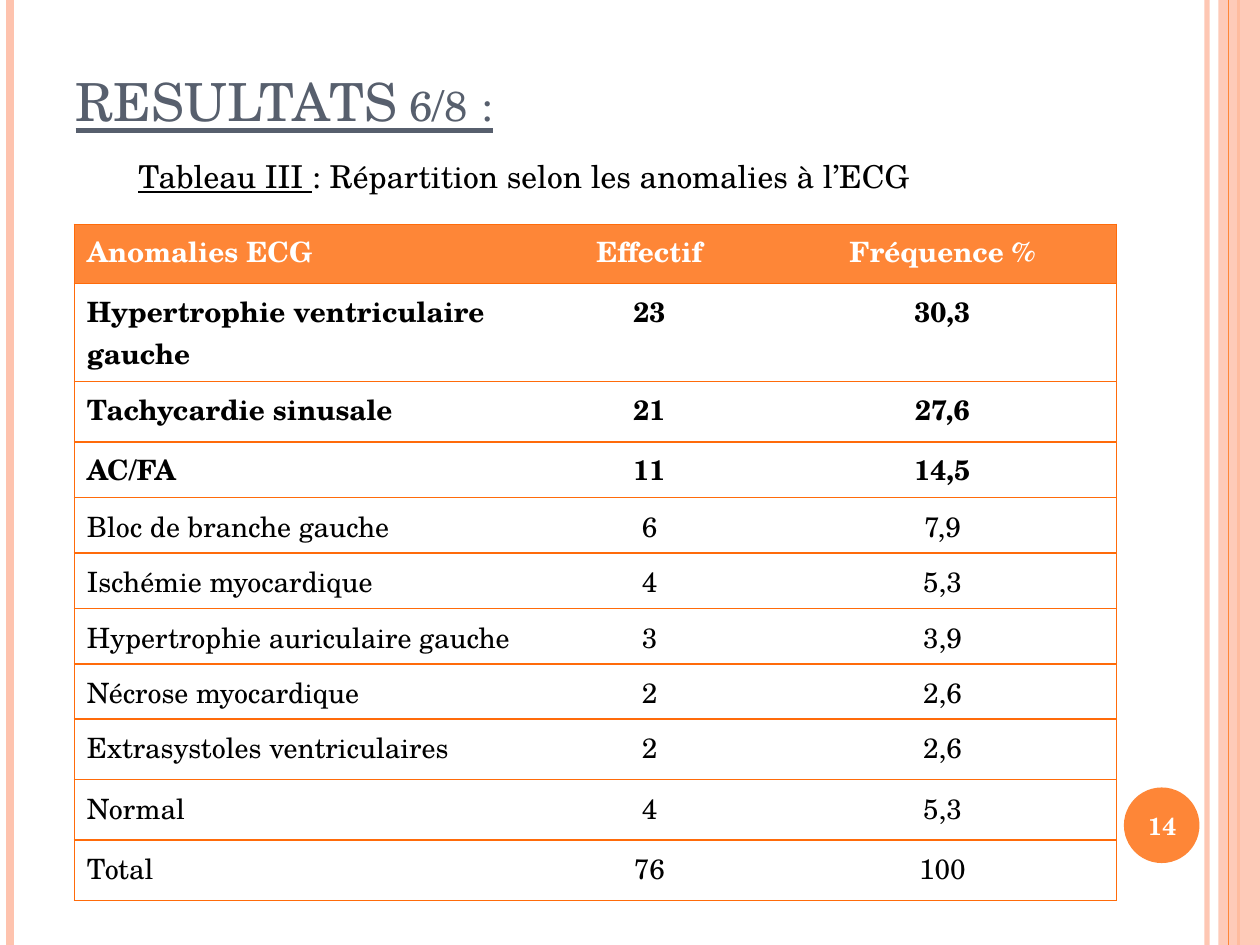
from lxml.etree import SubElement
from pptx import Presentation
from pptx.dml.color import RGBColor
from pptx.enum.shapes import MSO_CONNECTOR, MSO_SHAPE
from pptx.enum.text import MSO_ANCHOR, PP_ALIGN
from pptx.oxml.ns import qn
from pptx.util import Inches, Pt

FONT = "TeX Gyre Schola"
ORANGE = RGBColor(0xFE, 0x86, 0x37)
BORDER = RGBColor(0xFF, 0x6B, 0x0A)
PEACH = RGBColor(0xFE, 0xC3, 0xAE)
SLATE = RGBColor(0x57, 0x5F, 0x6D)
BLACK = RGBColor(0, 0, 0)
WHITE = RGBColor(0xFF, 0xFF, 0xFF)

HEADER = ("Anomalies ECG", "Effectif", "Fréquence %")
ROWS = [
    ("Hypertrophie ventriculaire gauche", "23", "30,3"),
    ("Tachycardie sinusale", "21", "27,6"),
    ("AC/FA", "11", "14,5"),
    ("Bloc de branche gauche", "6", "7,9"),
    ("Ischémie myocardique", "4", "5,3"),
    ("Hypertrophie auriculaire gauche", "3", "3,9"),
    ("Nécrose myocardique", "2", "2,6"),
    ("Extrasystoles ventriculaires", "2", "2,6"),
    ("Normal", "4", "5,3"),
    ("Total", "76", "100"),
]
COL_WIDTHS = (3.62, 1.89, 2.76)
ROW_HEIGHTS = [0.47, 0.78, 0.48] + [0.44] * 5 + [0.48] * 3
BOLD_ROWS = 4


class SlideBuilder:
    def __init__(self, prs):
        self.s = prs.slides.add_slide(prs.slide_layouts[5])

    def run(self, p, text, color=BLACK, **fmt):
        r = p.add_run()
        r.text = text
        for name, value in {"name": FONT, **fmt}.items():
            setattr(r.font, name, value)
        r.font.color.rgb = color
        return r

    def alpha(self, fill_parent, percent):
        clr = fill_parent.find(".//" + qn("a:srgbClr"))
        SubElement(clr, qn("a:alpha"), val=str(percent * 1000))

    def title(self, text, left, top, width, height):
        sp = self.s.shapes.title
        box = {"left": left, "top": top, "width": width, "height": height}
        for name, value in box.items():
            setattr(sp, name, Inches(value))
        tf = sp.text_frame
        tf.vertical_anchor = MSO_ANCHOR.BOTTOM
        tf.margin_bottom = Inches(0.5)
        p = tf.paragraphs[0]
        p.alignment = PP_ALIGN.LEFT
        r = self.run(p, text, SLATE, size=Pt(30), underline=True)
        r.font._element.set("cap", "small")

    def vertical_line(self, x, color, width, opacity=100):
        x = Inches(x)
        line = self.s.shapes.add_connector(
            MSO_CONNECTOR.STRAIGHT, x, 0, x, Inches(7.5))
        line.line.color.rgb = color
        line.line.width = Pt(width)
        if opacity < 100:
            self.alpha(line.line._ln, opacity)
        SubElement(line._element.spPr, qn("a:effectLst"))

    def shape(self, kind, left, top, width, height, color, opacity=100):
        sp = self.s.shapes.add_shape(
            kind, *map(Inches, (left, top, width, height)))
        sp.shadow.inherit = False
        sp.fill.solid()
        sp.fill.fore_color.rgb = color
        sp.line.fill.background()
        if opacity < 100:
            self.alpha(sp._element.spPr.find(qn("a:solidFill")), opacity)

    def text(self, runs, left, top, width, height, align=PP_ALIGN.LEFT,
             anchor=MSO_ANCHOR.TOP, wrap=True):
        tf = self.s.shapes.add_textbox(
            *map(Inches, (left, top, width, height))).text_frame
        tf.word_wrap = wrap
        tf.vertical_anchor = anchor
        p = tf.paragraphs[0]
        p.alignment = align
        for text, fmt in runs:
            self.run(p, text, **fmt)

    def borders(self, cell, sides):
        tcPr = cell._tc.get_or_add_tcPr()
        for i, side in enumerate(("lnL", "lnR", "lnT", "lnB")):
            ln = tcPr.makeelement(qn("a:" + side), {"w": str(Pt(1))})
            if side in sides:
                fill = SubElement(ln, qn("a:solidFill"))
                SubElement(fill, qn("a:srgbClr"), val=str(BORDER))
            else:
                SubElement(ln, qn("a:noFill"))
            tcPr.insert(i, ln)

    def table(self, rows, left, top):
        table = self.s.shapes.add_table(
            len(rows), len(COL_WIDTHS), Inches(left), Inches(top),
            Inches(sum(COL_WIDTHS)), Inches(sum(ROW_HEIGHTS))).table
        table.horz_banding = False
        for col, width in zip(table.columns, COL_WIDTHS):
            col.width = Inches(width)
        for row, height in zip(table.rows, ROW_HEIGHTS):
            row.height = Inches(height)
        for i, values in enumerate(rows):
            for j, value in enumerate(values):
                cell = table.cell(i, j)
                cell.fill.solid()
                cell.fill.fore_color.rgb = WHITE if i else ORANGE
                sides = {"lnT", "lnB"}
                if j == 0:
                    sides.add("lnL")
                if j == len(values) - 1:
                    sides.add("lnR")
                self.borders(cell, sides)
                p = cell.text_frame.paragraphs[0]
                p.alignment = PP_ALIGN.CENTER if j else PP_ALIGN.LEFT
                p.line_spacing = Pt(24.4)
                self.run(p, value, BLACK if i else WHITE,
                         size=Pt(16), bold=i < BOLD_ROWS)


def main():
    prs = Presentation()
    prs.slide_width, prs.slide_height = Inches(10), Inches(7.5)
    b = SlideBuilder(prs)
    b.vertical_line(9.58, PEACH, 3, 93)
    b.vertical_line(0.08, PEACH, 4.5)
    b.vertical_line(9.83, ORANGE, 1.5)
    b.shape(MSO_SHAPE.RECTANGLE, 9.67, 0, 0.33, 7.5, PEACH, 87)
    b.vertical_line(9.75, ORANGE, 0.75)
    b.shape(MSO_SHAPE.OVAL, 8.92, 6.25, 0.6, 0.6, ORANGE)
    b.title("RESULTATS 6/8\u00a0:", 0.5, 0.3, 8.17, 1.25)
    b.text([("14", {"color": WHITE, "size": Pt(14), "bold": True})],
           8.89, 6.27, 0.67, 0.57, PP_ALIGN.CENTER, MSO_ANCHOR.MIDDLE)
    b.table([HEADER] + ROWS, 0.59, 1.78)
    b.text([("Tableau III ", {"size": Pt(18), "underline": True}),
            (": Répartition selon les anomalies à l’ECG", {"size": Pt(18)})],
           1, 1.2, 6.33, 0.4, wrap=False)
    prs.save("out.pptx")


if __name__ == "__main__":
    main()
